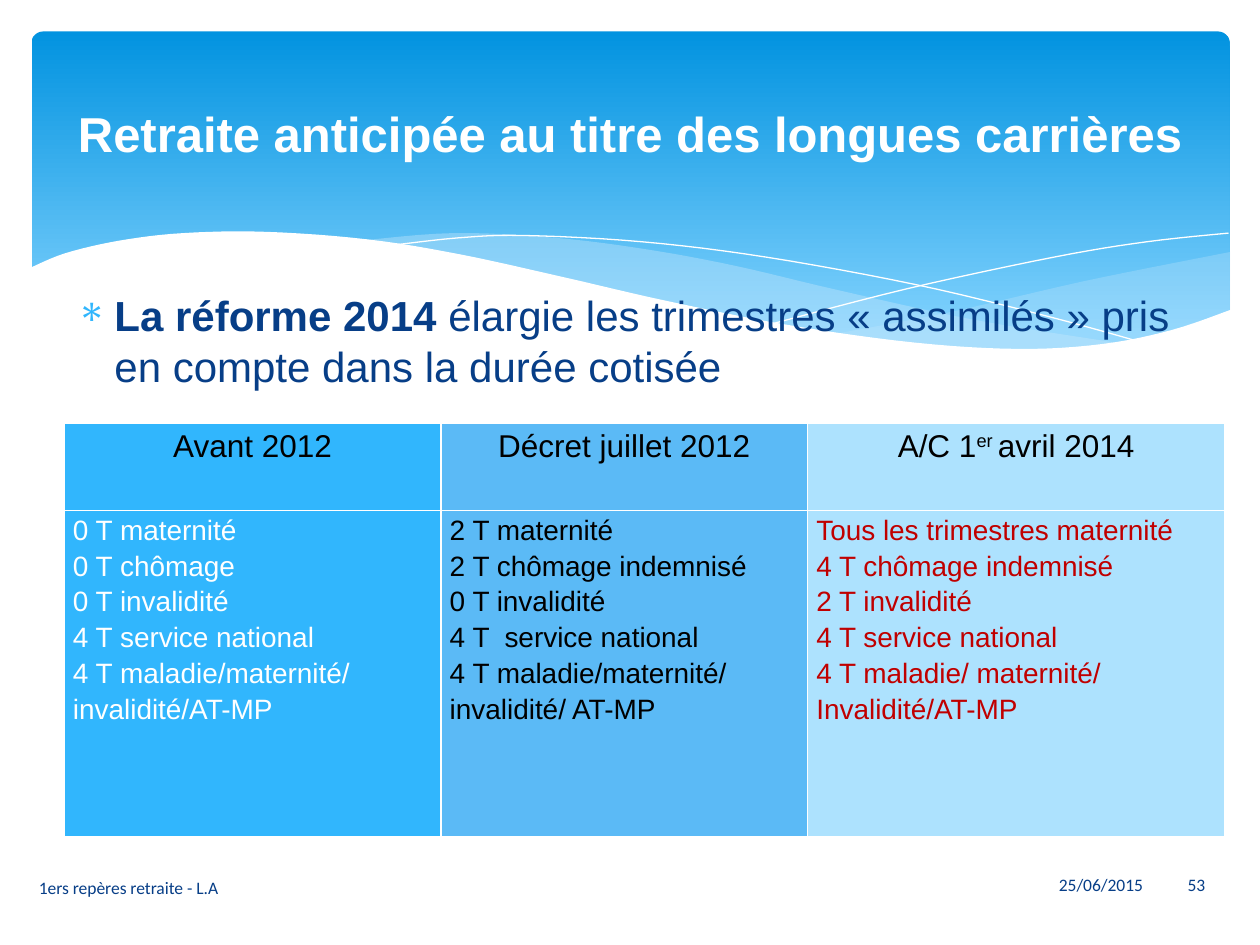
from lxml import etree
from pptx import Presentation
from pptx.dml.color import RGBColor
from pptx.enum.shapes import MSO_SHAPE as Shape
from pptx.enum.text import MSO_ANCHOR as Anchor, PP_ALIGN as Align
from pptx.oxml.ns import qn
from pptx.util import Pt

COLORS = {
    "white": "FFFFFF", "black": "000000", "navy": "073E87", "red": "C00000",
    "sky": "31B6FD", "mid": "5BBAF6", "pale": "ADE2FE",
    "top": "0293E0", "bottom": "83D3FE", "wave": "C6E7FC",
}

# Each wave is a list of edges; each edge is a smooth curve through its points.
RIGHT_WAVE = [
    [(703, 144), (620, 160.6), (542, 178.6), (476, 191)],
    [(476, 191), (518, 195.8), (578, 200), (634, 196.6), (673, 188.6), (703, 178)],
]
LONG_WAVE = [
    [(643, 196.6), (558, 183), (481, 166.3), (420.5, 152), (370, 142.6),
     (318, 136), (260, 133.2), (206, 137.5)],
    [(206, 137.5), (260.6, 146), (323, 160), (407.5, 178.6), (479, 191.5),
     (538.6, 198.7), (589, 200.2), (643, 196.6)],
]
FALLING_LINE = [[(222.5, 140.4), (261.4, 136), (299.5, 134.6), (367, 138.2),
                 (438, 147), (523.4, 162.7), (598.3, 180.7), (653, 195.8)]]
RISING_LINE = [[(441.4, 185), (518.4, 165), (602, 147), (655, 138.2), (702, 133.2)]]
WHITE_WAVE = [
    [(703.4, 177), (669.6, 188.6), (630, 196.6), (582.5, 199.4), (522.7, 195.8),
     (450.7, 185.8), (381, 172), (322, 158.4), (263, 145.4), (210, 136.8),
     (152, 132.5), (105, 133.2), (68.4, 137.5), (37.4, 144.7), (16.6, 153.4)],
    [(16.6, 153.4), (16.6, 237)],
    [(16.6, 237), (703.4, 237)],
]

# Heading runs, entries, fill, text colour
COLUMNS = [
    (["Avant 2012"],
     ["0 T maternité", "0 T chômage", "0 T invalidité", "4 T service national",
      "4 T maladie/maternité/", "invalidité/AT-MP"], "sky", "white"),
    (["Décret juillet 2012"],
     ["2 T maternité", "2 T chômage indemnisé", "0 T invalidité",
      "4 T  service national", "4 T maladie/maternité/", "invalidité/ AT-MP"],
     "mid", "black"),
    (["A/C 1", "er ", "avril 2014"],
     ["Tous les trimestres maternité", "4 T chômage indemnisé", "2 T invalidité",
      "4 T service national", "4 T maladie/ maternité/", "Invalidité/AT-MP"],
     "pale", "red"),
]
COLUMN_WIDTHS = [215.3, 209.5, 238.3]
ROW_HEIGHTS = [49.7, 186.5]


def rgb(name):
    return RGBColor.from_string(COLORS[name])


def smooth(points, steps=6):
    """Return points along a Catmull-Rom curve through the given ones."""
    padded = [points[0], *points, points[-1]]
    curve = [points[0]]
    for a, b, c, d in zip(padded, padded[1:], padded[2:], padded[3:]):
        for i in range(1, steps + 1):
            t = i / steps
            curve.append(tuple(
                0.5 * (2 * q + (r - p) * t + (2 * p - 5 * q + 4 * r - s) * t ** 2
                       + (3 * q - p - 3 * r + s) * t ** 3)
                for p, q, r, s in zip(a, b, c, d)))
    return curve


def add_wave(s, edges, fill=None, alpha=None):
    """Draw a filled wave, or an open white hairline when fill is None."""
    points = [(Pt(x), Pt(y)) for edge in edges for x, y in smooth(edge)]
    builder = s.shapes.build_freeform(*points[0])
    builder.add_line_segments(points[1:], close=fill is not None)
    wave = builder.convert_to_shape()
    wave.shadow.inherit = False
    if fill is None:
        wave.fill.background()
        wave.line.color.rgb = rgb("white")
        wave.line.width = Pt(0)
        return
    wave.fill.solid()
    wave.fill.fore_color.rgb = rgb(fill)
    wave.line.fill.background()
    if alpha:
        color = wave.fill._xPr.find(qn("a:solidFill"))[0]
        etree.SubElement(color, qn("a:alpha"), val=str(alpha * 1000))


def add_banner(s):
    banner = s.shapes.add_shape(Shape.ROUNDED_RECTANGLE, Pt(18), Pt(18), Pt(684.7), Pt(194.4))
    banner.adjustments[0] = 0.034
    banner.shadow.inherit = False
    banner.line.fill.background()
    banner.fill.gradient()
    banner.fill.gradient_angle = 270
    for stop, name, position in zip(banner.fill.gradient_stops, ("top", "bottom"), (0, 0.9)):
        stop.color.rgb = rgb(name)
        stop.position = position


def format_run(r, size, color, font="Arial", bold=False):
    r.font.size = Pt(size)
    r.font.name = font
    r.font.bold = bold
    r.font.color.rgb = rgb(color)


def add_text(s, box, text, size, color, font="Arial", bold=False,
             align=Align.LEFT, anchor=Anchor.MIDDLE):
    tf = s.shapes.add_textbox(*map(Pt, box)).text_frame
    tf.word_wrap = True
    tf.vertical_anchor = anchor
    tf.text = text
    p = tf.paragraphs[0]
    p.alignment = align
    format_run(p.runs[0], size, color, font, bold)
    return p


def add_bullet(p, char, color, indent):
    pPr = p._p.get_or_add_pPr()
    pPr.set("marL", str(Pt(indent)))
    pPr.set("indent", str(-Pt(indent)))
    bullet_color = etree.SubElement(pPr, qn("a:buClr"))
    etree.SubElement(bullet_color, qn("a:srgbClr"), val=COLORS[color])
    etree.SubElement(pPr, qn("a:buChar"), char=char)


def add_intro(s):
    p = add_text(s, (36.7, 162, 663.1, 331.2), "La réforme 2014 ", 24, "navy",
                 bold=True, anchor=Anchor.TOP)
    r = p.add_run()
    r.text = "élargie les trimestres «\u00a0assimilés\u00a0» pris en compte dans la durée cotisée"
    format_run(r, 24, "navy")
    p.space_before = Pt(4.8)
    add_bullet(p, "∗", "sky", 21.6)


def style_cell(cell, fill):
    cell.margin_left = cell.margin_right = Pt(5)
    cell.margin_top = cell.margin_bottom = 0
    tcPr = cell._tc.get_or_add_tcPr()
    for side in ("lnL", "lnR", "lnT", "lnB"):
        border = etree.SubElement(tcPr, qn(f"a:{side}"), w=str(Pt(1)))
        solid = etree.SubElement(border, qn("a:solidFill"))
        etree.SubElement(solid, qn("a:srgbClr"), val=COLORS["white"])
    cell.fill.solid()
    cell.fill.fore_color.rgb = rgb(fill)


def fill_heading(cell, parts):
    p = cell.text_frame.paragraphs[0]
    p.alignment = Align.CENTER
    p.line_spacing = 1.15
    for part in parts:
        r = p.add_run()
        r.text = part
        format_run(r, 18, "black")
        if part == "er ":
            r.font._rPr.set("baseline", "30000")


def fill_entries(cell, entries, color):
    cell.text_frame.text = "\n".join(entries)
    for p in cell.text_frame.paragraphs:
        p.line_spacing = 1.15
        format_run(p.runs[0], 16, color)


def add_comparison(s):
    table = s.shapes.add_table(2, 3, Pt(36.7), Pt(242), Pt(sum(COLUMN_WIDTHS)),
                               Pt(sum(ROW_HEIGHTS))).table
    for row, height in zip(table.rows, ROW_HEIGHTS):
        row.height = Pt(height)
    for i, (heading, entries, fill, color) in enumerate(COLUMNS):
        table.columns[i].width = Pt(COLUMN_WIDTHS[i])
        for row in range(2):
            style_cell(table.cell(row, i), fill)
        fill_heading(table.cell(0, i), heading)
        fill_entries(table.cell(1, i), entries, color)


def add_footer(s):
    for box, text, align in [
        ((15.1, 492.5, 298, 28.8), "1ers repères retraite - L.A", Align.LEFT),
        ((354.2, 491, 306, 28.8), "25/06/2015", Align.RIGHT),
        ((638, 496.8, 91.4, 17.3), "53", Align.CENTER),
    ]:
        add_text(s, box, text, 10, "navy", font="Calibri", align=align)


def main():
    prs = Presentation()
    prs.slide_width, prs.slide_height = Pt(720), Pt(540)
    s = prs.slides.add_slide(prs.slide_layouts[6])
    add_banner(s)
    add_wave(s, RIGHT_WAVE, "wave", 29)
    add_wave(s, LONG_WAVE, "wave", 40)
    add_wave(s, FALLING_LINE)
    add_wave(s, RISING_LINE)
    add_wave(s, WHITE_WAVE, "white")
    add_intro(s)
    add_text(s, (36, 26.6, 648, 98.6), "Retraite anticipée au titre des longues carrières",
             28, "white", bold=True, align=Align.CENTER)
    add_comparison(s)
    add_footer(s)
    prs.save("out.pptx")


if __name__ == "__main__":
    main()
